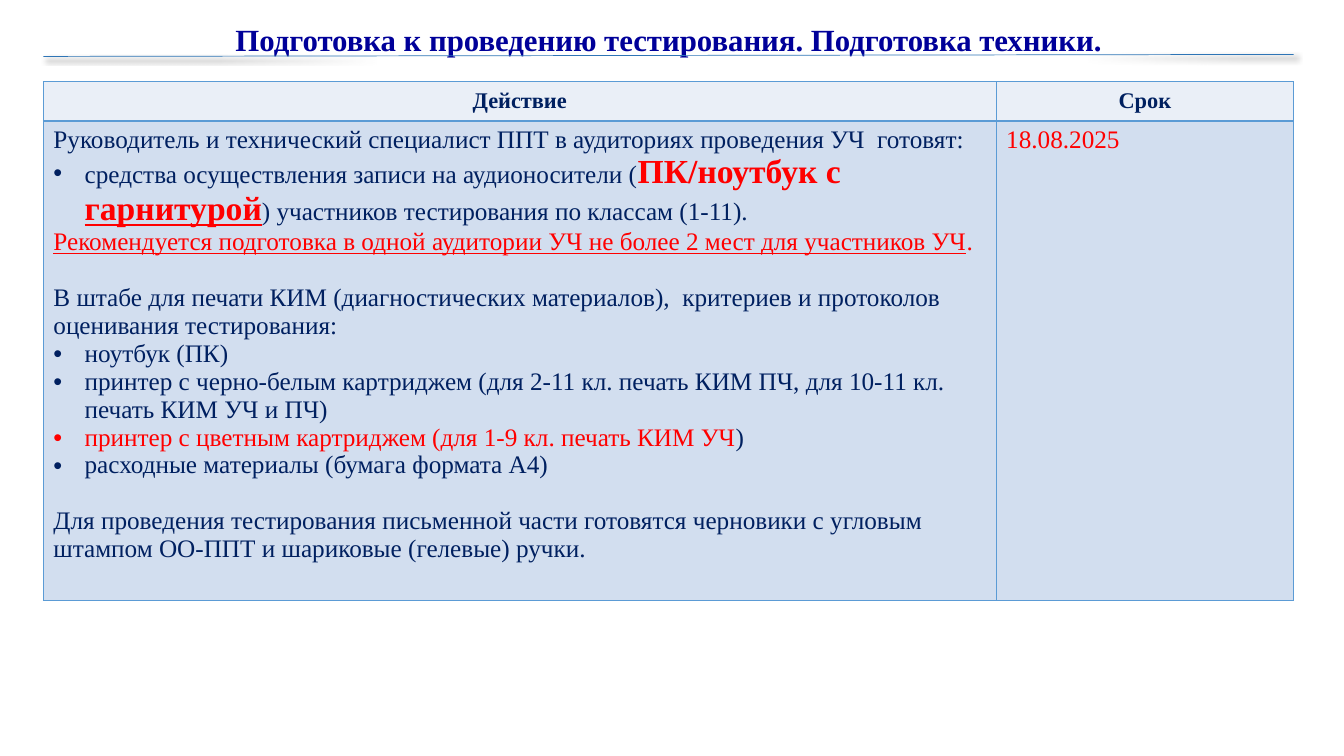
from lxml import etree
from pptx import Presentation
from pptx.dml.color import RGBColor
from pptx.enum import shapes, text
from pptx.oxml import ns
from pptx.util import Inches, Pt

NAVY = RGBColor(0x00, 0x20, 0x60)
TITLE_BLUE = RGBColor(0x00, 0x00, 0x99)
RED = RGBColor(0xFF, 0x00, 0x00)
LINE_BLUE = RGBColor(0x2E, 0x75, 0xB6)
BORDER = RGBColor(0x5B, 0x9B, 0xD5)
HEAD_FILL = RGBColor(0xEA, 0xEF, 0xF7)
BODY_FILL = RGBColor(0xD2, 0xDE, 0xEF)
FONT = "Times New Roman"

# Content: a paragraph is its runs plus options, a run is its text plus format
TITLE = "Подготовка к проведению тестирования. Подготовка техники."
HEADERS = ["Действие", "Срок"]
BIG = dict(size=24, color=RED, bold=True)
BULLET = dict(bullet=True)
GAP = dict(before=20)
ACTIONS = [
    ([("Руководитель и технический специалист ППТ в аудиториях проведения УЧ  готовят:", {})], {}),
    ([("средства осуществления записи на аудионосители (", {}),
      ("ПК/ноутбук с ", BIG),
      ("гарнитурой", dict(BIG, underline=True)),
      (") участников тестирования по классам (1-11).", {})], BULLET),
    ([("Рекомендуется подготовка в одной аудитории УЧ не более 2 мест для участников УЧ",
       dict(color=RED, underline=True)),
      (".", dict(color=RED))], {}),
    ([("В штабе для печати КИМ (диагностических материалов),  критериев и протоколов "
       "оценивания тестирования:", {})], GAP),
    ([("ноутбук (ПК)", {})], BULLET),
    ([("принтер с черно-белым картриджем (для 2-11 кл. печать КИМ ПЧ, для 10-11 кл. "
       "печать КИМ УЧ и ПЧ)", {})], BULLET),
    ([("принтер с цветным картриджем (для 1-9 кл. печать КИМ УЧ", dict(color=RED)),
      (")", {})], BULLET),
    ([("расходные материалы (бумага формата А4)", {})], BULLET),
    ([("Для проведения тестирования письменной части готовятся черновики с угловым "
       "штампом ОО-ППТ и шариковые (гелевые) ручки.", {})], GAP),
]
DEADLINE = [([("18.08.2025", dict(color=RED))], {})]

# Layout in inches
LEFT, WIDTH = 0.43, 12.4
TABLE_TOP = 0.81
COLS, ROWS = [9.45, 2.95], [0.39, 4.55]
INDENT = 0.31


def add_run(p, words, size=18, color=NAVY, bold=False, underline=False):
    r = p.add_run()
    r.text = words
    f = r.font
    f.name, f.size, f.bold, f.underline = FONT, Pt(size), bold, underline
    f.color.rgb = color


def add_bullet(p):
    pPr = p._p.get_or_add_pPr()
    pPr.set("marL", str(Inches(INDENT)))
    pPr.set("indent", str(-Inches(INDENT)))
    etree.SubElement(pPr, ns.qn("a:buFont"), typeface="Arial")
    etree.SubElement(pPr, ns.qn("a:buChar"), char="•")


def fill_text(tf, paragraphs):
    for i, (runs, options) in enumerate(paragraphs):
        p = tf.add_paragraph() if i else tf.paragraphs[0]
        if "align" in options:
            p.alignment = options["align"]
        if "spacing" in options:
            p.line_spacing = options["spacing"]
        if "before" in options:
            p.space_before = Pt(options["before"])
        if options.get("bullet"):
            add_bullet(p)
        for words, style in runs:
            add_run(p, words, **style)


def format_cell(cell, color):
    tcPr = cell._tc.get_or_add_tcPr()
    for side in ("lnL", "lnR", "lnT", "lnB"):
        ln = etree.SubElement(tcPr, ns.qn("a:" + side), w=str(Pt(1)))
        solid = etree.SubElement(ln, ns.qn("a:solidFill"))
        etree.SubElement(solid, ns.qn("a:srgbClr"), val=str(BORDER))
    cell.fill.solid()
    cell.fill.fore_color.rgb = color


prs = Presentation()
prs.slide_width, prs.slide_height = Inches(13.33), Inches(7.5)
s = prs.slides.add_slide(prs.slide_layouts[6])
CENTER = text.PP_ALIGN.CENTER

# Title
tf = s.shapes.add_textbox(Inches(LEFT), 0, Inches(WIDTH), Inches(0.63)).text_frame
tf.word_wrap = True
tf.vertical_anchor = text.MSO_ANCHOR.BOTTOM
fill_text(tf, [([(TITLE, dict(size=22, color=TITLE_BLUE, bold=True))],
                dict(align=CENTER, spacing=0.9))])

# Table of actions and deadlines
table = s.shapes.add_table(2, 2, Inches(LEFT), Inches(TABLE_TOP),
                           Inches(WIDTH), Inches(sum(ROWS))).table
for column, width in zip(table.columns, COLS):
    column.width = Inches(width)
for row, height in zip(table.rows, ROWS):
    row.height = Inches(height)
for c, (header, body) in enumerate(zip(HEADERS, [ACTIONS, DEADLINE])):
    head_cell, body_cell = table.cell(0, c), table.cell(1, c)
    format_cell(head_cell, HEAD_FILL)
    format_cell(body_cell, BODY_FILL)
    head_cell.vertical_anchor = text.MSO_ANCHOR.MIDDLE
    fill_text(head_cell.text_frame,
              [([(header, dict(size=16, bold=True))], dict(align=CENTER))])
    fill_text(body_cell.text_frame, body)

# Rule under the title, with a soft shadow
rule = s.shapes.add_connector(shapes.MSO_CONNECTOR.STRAIGHT, Inches(LEFT), Inches(0.56),
                              Inches(LEFT + WIDTH), Inches(0.54))
rule.line.color.rgb = LINE_BLUE
rule.line.width = Pt(0.5)
effects = etree.SubElement(rule._element.spPr, ns.qn("a:effectLst"))
shadow = etree.SubElement(effects, ns.qn("a:outerShdw"), blurRad=str(Pt(4)),
                          dist=str(Pt(3)), dir=str(45 * 60000), algn="tl", rotWithShape="0")
shade = etree.SubElement(shadow, ns.qn("a:srgbClr"), val="000000")
etree.SubElement(shade, ns.qn("a:alpha"), val="40000")

prs.save("out.pptx")
